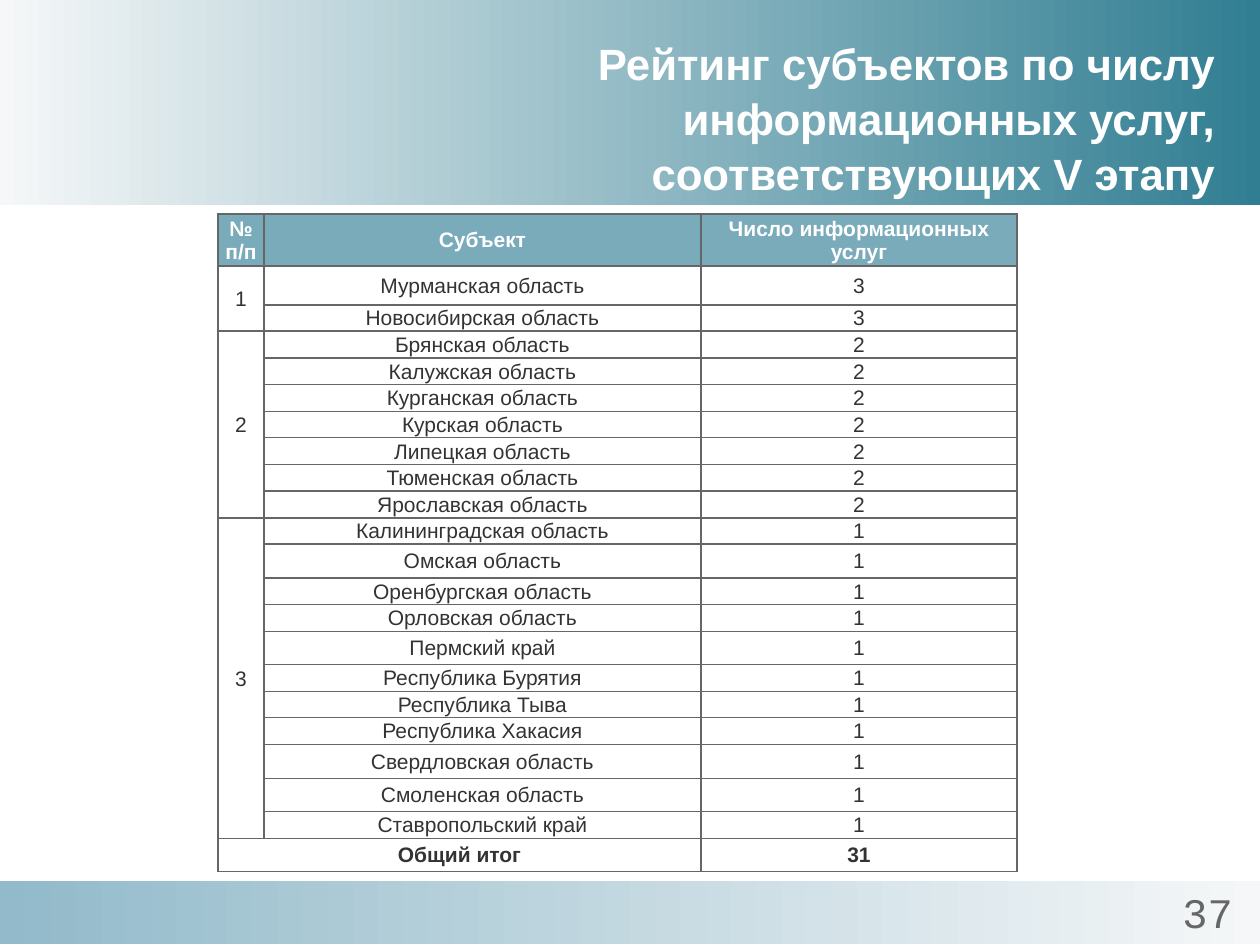
"""Build the slide ranking regions by number of information services at stage V."""
from itertools import pairwise

from lxml.etree import SubElement
from pptx import Presentation
from pptx.dml.color import RGBColor
from pptx.enum.shapes import MSO_SHAPE
from pptx.enum.text import MSO_ANCHOR, PP_ALIGN
from pptx.oxml.ns import qn
from pptx.util import Pt

PX = 914400 / 126
COLORS = {
    "light": "F5F7F8", "teal": "317E92", "sky": "92BACA", "header": "7AABBA",
    "white": "FFFFFF", "ink": "333333", "gray": "666666",
}
RANKING = [
    ("1", 3, ["Мурманская область", "Новосибирская область"]),
    ("2", 2, ["Брянская область", "Калужская область", "Курганская область",
              "Курская область", "Липецкая область", "Тюменская область",
              "Ярославская область"]),
    ("3", 1, ["Калининградская область", "Омская область", "Оренбургская область",
              "Орловская область", "Пермский край", "Республика Бурятия",
              "Республика Тыва", "Республика Хакасия", "Свердловская область",
              "Смоленская область", "Ставропольский край"]),
]
COLUMN_EDGES = [218, 264, 701, 1017]
ROW_EDGES = [214, 266, 305, 331, 358, 384, 411, 437, 464, 490, 517, 543, 577,
             603, 630, 663, 690, 716, 743, 777, 810, 837, 870]
CELL_FORMAT = {
    "vertical_anchor": MSO_ANCHOR.MIDDLE, "margin_left": round(PX),
    "margin_right": round(PX), "margin_top": round(PX), "margin_bottom": 0,
}


def emu(*lengths):
    return [round(length * PX) for length in lengths]


def write(paragraph, wording, align, color, **font_format):
    paragraph.alignment = align
    run = paragraph.add_run()
    run.text = wording
    run.font.color.rgb = RGBColor.from_string(COLORS[color])
    for attribute, value in font_format.items():
        setattr(run.font, attribute, value)


deck = Presentation()
deck.slide_width, deck.slide_height = emu(1260, 945)
slide = deck.slides.add_slide(deck.slide_layouts[6])

for top, height, end_color, angle in [(0, 205, "teal", 0), (881, 63, "sky", 180)]:
    band = slide.shapes.add_shape(MSO_SHAPE.RECTANGLE, *emu(0, top, 1260, height))
    band.shadow.inherit = False
    band.line.fill.background()
    band.fill.gradient()
    band.fill.gradient_angle = angle
    for stop, color in zip(band.fill.gradient_stops, ["light", end_color]):
        stop.color.rgb = RGBColor.from_string(COLORS[color])

title = slide.shapes.add_textbox(*emu(480, 38, 747, 157)).text_frame
title.word_wrap = True
title.vertical_anchor = MSO_ANCHOR.MIDDLE
title.paragraphs[0].line_spacing = 1.05
write(title.paragraphs[0],
      "Рейтинг субъектов по числу информационных услуг, соответствующих V этапу",
      PP_ALIGN.RIGHT, "white", name="Arial", size=Pt(25), bold=True)

page_number = slide.shapes.add_textbox(*emu(1155, 880, 105, 65)).text_frame
page_number.word_wrap = True
write(page_number.paragraphs[0], "37", PP_ALIGN.CENTER, "gray",
      name="Courier New", size=Pt(24))

rows = [("№ п/п", "Субъект", "Число информационных услуг")]
merges = []
for place, services, regions in RANKING:
    merges.append((len(rows), 0, len(rows) + len(regions) - 1, 0))
    rows += [(place if region == regions[0] else "", region, str(services))
             for region in regions]
total = sum(services * len(regions) for _, services, regions in RANKING)
merges.append((len(rows), 0, len(rows), 1))
rows.append(("Общий итог", "", str(total)))

left, top = COLUMN_EDGES[0], ROW_EDGES[0]
ranking = slide.shapes.add_table(
    len(rows), 3,
    *emu(left, top, COLUMN_EDGES[-1] - left, ROW_EDGES[-1] - top)).table
ranking.first_row = ranking.horz_banding = False
for column, (start, end) in zip(ranking.columns, pairwise(COLUMN_EDGES)):
    column.width = round((end - start) * PX)
for row, (start, end) in zip(ranking.rows, pairwise(ROW_EDGES)):
    row.height = round((end - start) * PX)
for first_row, first_column, last_row, last_column in merges:
    ranking.cell(first_row, first_column).merge(ranking.cell(last_row, last_column))

for row_index, wordings in enumerate(rows):
    is_header = row_index == 0
    is_bold = is_header or row_index == len(rows) - 1
    for column_index, wording in enumerate(wordings):
        cell = ranking.cell(row_index, column_index)
        for attribute, value in CELL_FORMAT.items():
            setattr(cell, attribute, value)
        for side in ("a:lnL", "a:lnR", "a:lnT", "a:lnB"):
            border = SubElement(cell._tc.get_or_add_tcPr(), qn(side), w=str(Pt(1)))
            border_fill = SubElement(border, qn("a:solidFill"))
            SubElement(border_fill, qn("a:srgbClr"), val=COLORS["gray"])
        if is_header:
            cell.fill.solid()
            cell.fill.fore_color.rgb = RGBColor.from_string(COLORS["header"])
        else:
            cell.fill.background()
        if wording:
            write(cell.text_frame.paragraphs[0], wording, PP_ALIGN.CENTER,
                  "white" if is_header else "ink",
                  name="Arial", size=Pt(12), bold=is_bold)

deck.save("out.pptx")
